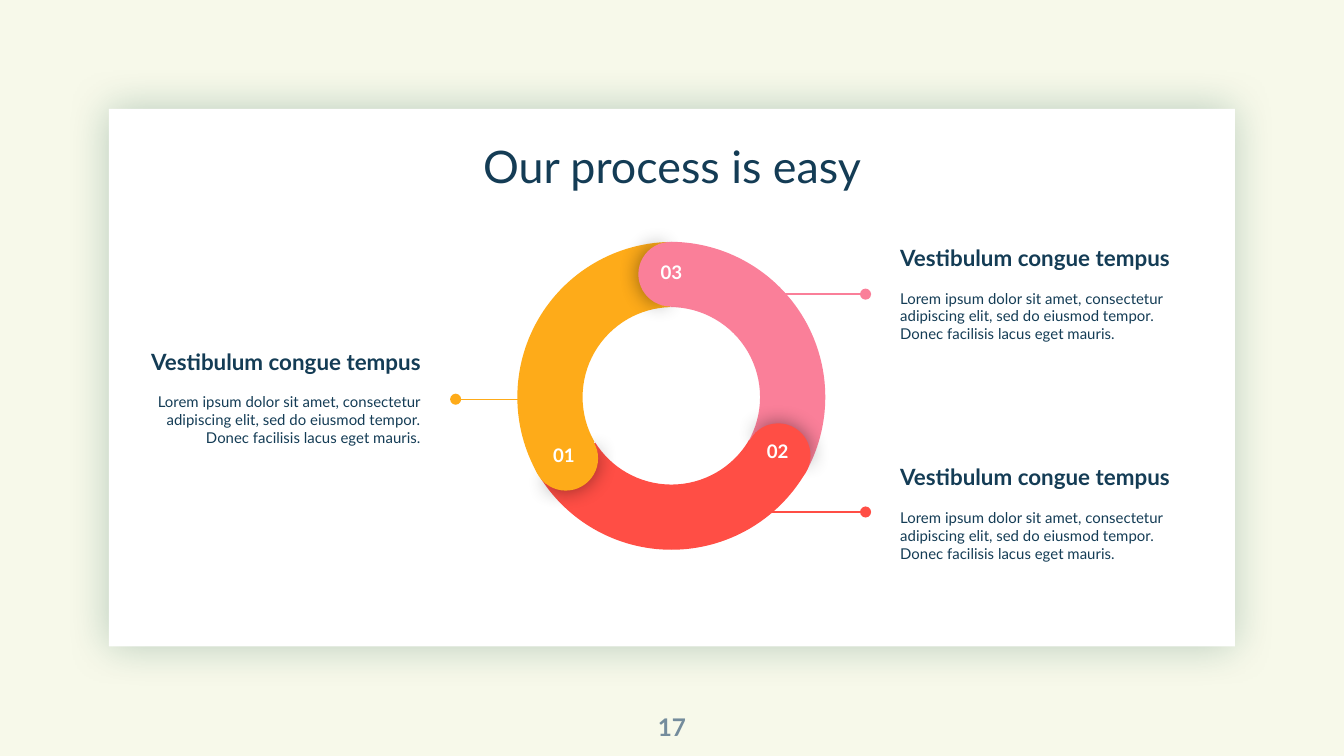
from dataclasses import dataclass

import pptx
import pptx.dml.color
import pptx.enum.shapes
import pptx.enum.text
import pptx.oxml
import pptx.oxml.ns
import pptx.util

Pt = pptx.util.Pt
Align = pptx.enum.text.PP_ALIGN
Anchor = pptx.enum.text.MSO_ANCHOR
Shape = pptx.enum.shapes.MSO_SHAPE

COLOURS = {
    "page": "F7F9EA", "card": "FFFFFF", "card_shadow": "054C3A",
    "ink": "143C55", "number": "748C9C", "cap_shadow": "000000",
    "orange": "FEAB19", "red": "FF4E45", "pink": "FA7F99",
}
FONT = "Lato"
HEADING = "Vestibulum congue tempus"
BODY = ("Lorem ipsum dolor sit amet, consectetur adipiscing elit, "
        "sed do eiusmod tempor. Donec facilisis lacus eget mauris.")
RING_SIZE, CAP_SIZE = 166.3, 34.6
CARD_WIDTH, CARD_HEIGHT = 161, 77
CAP_FRONT = (61.9, 149.96)  # rounded end that casts the shadow
CAP_BACK = (40.28, 171.84)  # hides the shadow over its own arc


@dataclass
class Shadow:
    colour: str
    opacity: int
    blur: float


@dataclass
class Step:
    number: str
    colour: str
    turn: int
    arc: tuple[float, float]
    arc_end: float
    cap: tuple[float, float]
    label: tuple[float, float]
    card: tuple[float, float]
    leader: tuple[float, float, float]  # start x, end x, y
    align: Align


# Back to front in the ring
STEPS = [
    Step("03", "pink", 60, (275.8, 129.6), 197.82, (342, 129.6), (344.6, 133.9),
         (475.2, 118.8), (386.6, 463.7, 157.6), Align.LEFT),
    Step("02", "red", 180, (276.5, 128.2), 196.63, (399.6, 226.8), (401.5, 229.7),
         (475.2, 236.2), (386.6, 463.7, 274.3), Align.LEFT),
    Step("01", "orange", 300, (277.2, 129.6), 197.03, (285.8, 228.2), (287, 231.8),
         (71.6, 174.2), (282.2, 244.1, 213.9), Align.RIGHT),
]


def rgb(name: str) -> pptx.dml.color.RGBColor:
    return pptx.dml.color.RGBColor.from_string(COLOURS[name])


def add_shadow(shape, shadow: Shadow) -> None:
    effects = shape._element.spPr.find(pptx.oxml.ns.qn("a:effectLst"))
    effects.append(pptx.oxml.parse_xml(
        f'<a:outerShdw {pptx.oxml.ns.nsdecls("a")} blurRad="{Pt(shadow.blur)}" '
        f'dist="0" dir="0" algn="ctr" rotWithShape="0">'
        f'<a:srgbClr val="{COLOURS[shadow.colour]}">'
        f'<a:alpha val="{shadow.opacity * 1000}"/></a:srgbClr></a:outerShdw>'))


def add_shape(page, kind, position, size, colour: str, rotation: float = 0,
              adjustments=(), shadow: Shadow | None = None) -> None:
    shape = page.shapes.add_shape(kind, *map(Pt, (*position, *size)))
    shape.fill.solid()
    shape.fill.fore_color.rgb = rgb(colour)
    shape.line.fill.background()
    shape.shadow.inherit = False
    shape.rotation = rotation
    for index, value in enumerate(adjustments):
        shape.adjustments[index] = value
    if shadow:
        add_shadow(shape, shadow)


def add_box(page, position, size, lines, align: Align, anchor: Anchor,
            inset: float = 0) -> list:
    """Lines hold text, size, bold and colour; returns the paragraphs."""
    box = page.shapes.add_textbox(*map(Pt, (*position, *size)))
    frame = box.text_frame
    frame.word_wrap = True
    frame.vertical_anchor = anchor
    frame.margin_left = frame.margin_right = Pt(inset)
    frame.margin_top = frame.margin_bottom = Pt(inset)
    frame.text = "\n".join(line[0] for line in lines)
    for para, (_, points, bold, colour) in zip(frame.paragraphs, lines):
        para.alignment = align
        font = para.runs[0].font
        font.name, font.size, font.bold = FONT, Pt(points), bold
        font.color.rgb = rgb(colour)
    return list(frame.paragraphs)


def add_leader(page, step: Step) -> None:
    start, end, y = step.leader
    leader = page.shapes.add_connector(
        pptx.enum.shapes.MSO_CONNECTOR.STRAIGHT, Pt(start), Pt(y), Pt(end), Pt(y))
    leader.line.color.rgb = rgb(step.colour)
    leader.line.width = Pt(0.75)
    namespace = pptx.oxml.ns.nsdecls("a")
    leader.line._get_or_add_ln().append(
        pptx.oxml.parse_xml(f'<a:tailEnd {namespace} type="oval"/>'))
    leader._element.spPr.append(pptx.oxml.parse_xml(f"<a:effectLst {namespace}/>"))


def add_card(page, step: Step) -> None:
    lines = [(HEADING, 12, True, "ink"), (BODY, 8, False, "ink")]
    paras = add_box(page, step.card, (CARD_WIDTH, CARD_HEIGHT), lines,
                    step.align, Anchor.MIDDLE, 7.2)
    paras[1].space_before = Pt(9.6)
    paras[1].space_after = Pt(16)


def add_cap(page, step: Step) -> None:
    size = (CAP_SIZE, CAP_SIZE)
    add_shape(page, Shape.PIE, step.cap, size, step.colour, step.turn - 59.4,
              CAP_FRONT, Shadow("cap_shadow", 43, 11.2))
    add_shape(page, Shape.PIE, step.cap, size, step.colour,
              (step.turn + 120) % 360, CAP_BACK)


def main() -> None:
    deck = pptx.Presentation()
    deck.slide_width, deck.slide_height = Pt(720), Pt(405)
    page = deck.slides.add_slide(deck.slide_layouts[6])
    page.background.fill.solid()
    page.background.fill.fore_color.rgb = rgb("page")

    # Panel, title and page number
    add_shape(page, Shape.RECTANGLE, (58.4, 58.4), (603.2, 288), "card",
              shadow=Shadow("card_shadow", 25, 22.5))
    title = add_box(page, (85, 77), (550, 26.7),
                    [("Our process is easy", 24, False, "ink")],
                    Align.CENTER, Anchor.BOTTOM)
    title[0].line_spacing = 0.9
    add_box(page, (338.4, 373.8), (43.2, 31), [("17", 13, True, "number")],
            Align.CENTER, Anchor.MIDDLE)

    # Descriptions with their leaders
    for step in STEPS:
        add_card(page, step)
        add_leader(page, step)

    # Ring: arcs, then rounded ends, then numbers
    for step in STEPS:
        add_shape(page, Shape.BLOCK_ARC, step.arc, (RING_SIZE, RING_SIZE),
                  step.colour, step.turn, (126.23, step.arc_end, 0.21))
    for step in STEPS:
        add_cap(page, step)
    for step in STEPS:
        add_box(page, step.label, (30.2, 15.8), [(step.number, 10, True, "card")],
                Align.CENTER, Anchor.TOP, 7.2)

    deck.save("out.pptx")


if __name__ == "__main__":
    main()
